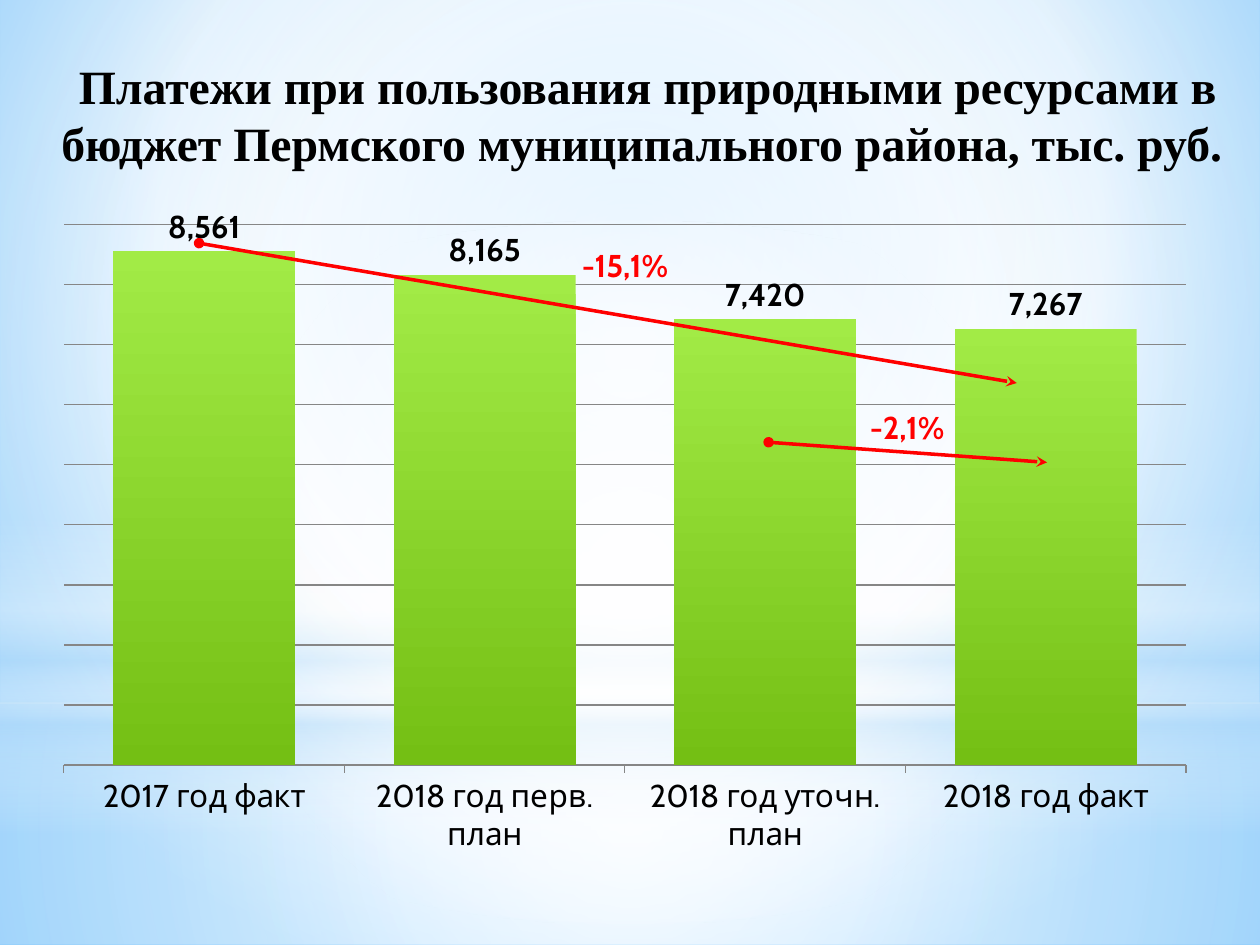
"""Build a slide on payments for the use of natural resources."""
import pptx
import pptx.chart.data
import pptx.dml.color
import pptx.enum.chart
import pptx.enum.shapes
import pptx.enum.text
import pptx.oxml
import pptx.oxml.ns
import pptx.util

RGB = pptx.dml.color.RGBColor
BLACK = RGB(0, 0, 0)
RED = RGB(255, 0, 0)
GREY = RGB(0x86, 0x86, 0x86)
WHITE = RGB(255, 255, 255)
SKY = RGB(0xB4, 0xDC, 0xFA)
PALE = RGB(0x9E, 0xD5, 0xFF)
BLUE = RGB(0x5B, 0xB9, 0xFF)
LIME = RGB(0xA2, 0xEB, 0x46)
GREEN = RGB(0x74, 0xBF, 0x14)

FONT = "Cabin"
TITLE = (" Платежи при пользования природными ресурсами в бюджет "
         "Пермского муниципального района, тыс. руб.")
DATA = {"2017 год факт": 8561, "2018 год перв. план": 8165,
        "2018 год уточн. план": 7420, "2018 год факт": 7267}
MID = (50, 50, 50, 50)
BASE = [(0, PALE, 100), (60, WHITE, 100), (100, BLUE, 100)]
LAYERS = [
    ("RECTANGLE", (0, 5.58, 10, 1.92), MID,
     [(0, WHITE, 91), (37, WHITE, 76), (100, SKY, 79)]),
    ("RECTANGLE", (0, 0, 10, 5.58), MID,
     [(0, WHITE, 89), (48, WHITE, 62), (100, SKY, 79)]),
    ("RECTANGLE", (0, 4.12, 10, 2.5), None,
     [(0, WHITE, 0), (29, WHITE, 30), (45, SKY, 40),
      (55, WHITE, 26), (65, SKY, 60), (100, WHITE, 0)]),
    ("OVAL", (0, 1.75, 10, 5.58), MID, [(0, WHITE, 100), (56, WHITE, 0)]),
]
TRENDS = [
    ("-15,1%", (4.52, 1.9, 1.18, 0.4), "LEFT", (1.58, 1.93, 8.07, 3.04)),
    ("-2,1%", (6.73, 3.19, 0.94, 0.4), "CENTER", (6.1, 3.51, 8.31, 3.67)),
]


def inch(box):
    return [pptx.util.Inches(n) for n in box]


def node(tag, body="", attrs=""):
    names = pptx.oxml.ns.nsdecls("a", "c")
    return pptx.oxml.parse_xml(f"<{tag} {names} {attrs}>{body}</{tag}>")


def blend(fill, root, stops, focus=None):
    fill.gradient()
    old = next(root.iter(pptx.oxml.ns.qn("a:gradFill")))
    marks = "".join(
        f'<a:gs pos="{pos * 1000}"><a:srgbClr val="{color}">'
        f'<a:alpha val="{alpha * 1000}"/></a:srgbClr></a:gs>'
        for pos, color, alpha in stops)
    if focus:
        sides = " ".join(f'{k}="{v * 1000}"' for k, v in zip("ltrb", focus))
        course = f'<a:path path="circle"><a:fillToRect {sides}/></a:path>'
    else:
        course = '<a:lin ang="5400000" scaled="0"/>'
    new = node("a:gradFill", f"<a:gsLst>{marks}</a:gsLst>{course}",
               'rotWithShape="1"')
    old.getparent().replace(old, new)


def style(font, name, size, color, bold=False):
    font.name, font.size, font.bold = name, pptx.util.Pt(size), bold
    font.color.rgb = color


def write(slide, text, box, align, wrap, *look):
    frame = slide.shapes.add_textbox(*inch(box)).text_frame
    frame.word_wrap = wrap
    frame.vertical_anchor = pptx.enum.text.MSO_ANCHOR.MIDDLE
    frame.text = text
    para = frame.paragraphs[0]
    para.alignment = pptx.enum.text.PP_ALIGN[align]
    style(para.runs[0].font, *look)


def draw_chart(slide):
    data = pptx.chart.data.CategoryChartData(number_format="#,##0")
    data.categories = list(DATA)
    data.add_series("Series 1", list(DATA.values()))
    kind = pptx.enum.chart.XL_CHART_TYPE.COLUMN_CLUSTERED
    box = inch((0.35, 1.53, 9.21, 5.37))
    chart = slide.shapes.add_chart(kind, *box, data).chart
    chart.has_title = chart.has_legend = False
    style(chart.font, FONT, 18, BLACK)

    axis = chart.value_axis
    axis.visible = False
    axis.minimum_scale, axis.maximum_scale, axis.major_unit = 0, 9000, 1000
    axis.has_major_gridlines = True
    base = chart.category_axis
    base.major_tick_mark = pptx.enum.chart.XL_TICK_MARK.OUTSIDE
    for line in (axis.major_gridlines.format.line, base.format.line):
        line.color.rgb, line.width = GREY, pptx.util.Pt(0.75)

    plot = chart.plots[0]
    plot.gap_width, plot.vary_by_categories = 54, False
    bars = plot.series[0]
    blend(bars.format.fill, bars._element, [(0, LIME, 100), (100, GREEN, 100)])
    plot.has_data_labels = True
    labels = plot.data_labels
    labels.show_value = True
    labels.number_format, labels.number_format_is_linked = "#,##0", False
    labels.position = pptx.enum.chart.XL_LABEL_POSITION.OUTSIDE_END
    style(labels.font, FONT, 18, BLACK, True)

    area = chart._chartSpace.chart.plotArea
    for old in area.findall(pptx.oxml.ns.qn("c:layout")):
        area.remove(old)
    rules = [("layoutTarget", "inner"), ("xMode", "edge"), ("yMode", "edge"),
             ("x", 0.017), ("y", 0.047), ("w", 0.967), ("h", 0.799)]
    body = "".join(f'<c:{k} val="{v}"/>' for k, v in rules)
    area.insert(0, node("c:layout", f"<c:manualLayout>{body}</c:manualLayout>"))


def draw_arrow(slide, ends):
    kind = pptx.enum.shapes.MSO_CONNECTOR.STRAIGHT
    arrow = slide.shapes.add_connector(kind, *inch(ends))
    arrow.line.color.rgb, arrow.line.width = RED, pptx.util.Pt(2)
    line = arrow.line._get_or_add_ln()
    line.append(node("a:headEnd", attrs='type="oval"'))
    line.append(node("a:tailEnd", attrs='type="stealth"'))
    arrow._element.spPr.append(node("a:effectLst"))


def main():
    deck = pptx.Presentation()
    deck.slide_width, deck.slide_height = inch((10, 7.5))
    slide = deck.slides.add_slide(deck.slide_layouts[6])
    blend(slide.background.fill, slide.element, BASE, (20, 10, 20, 60))
    for name, box, focus, stops in LAYERS:
        kind = pptx.enum.shapes.MSO_SHAPE[name]
        shape = slide.shapes.add_shape(kind, *inch(box))
        shape.shadow.inherit = False
        shape.line.fill.background()
        blend(shape.fill, shape.element, stops, focus)
    write(slide, TITLE, (0.35, 0.29, 9.49, 1.23), "CENTER", True,
          "Times New Roman", 27.3, BLACK, True)
    draw_chart(slide)
    for text, box, align, ends in TRENDS:
        draw_arrow(slide, ends)
        write(slide, text, box, align, True, FONT, 18, RED, True)
    deck.save("out.pptx")


if __name__ == "__main__":
    main()
